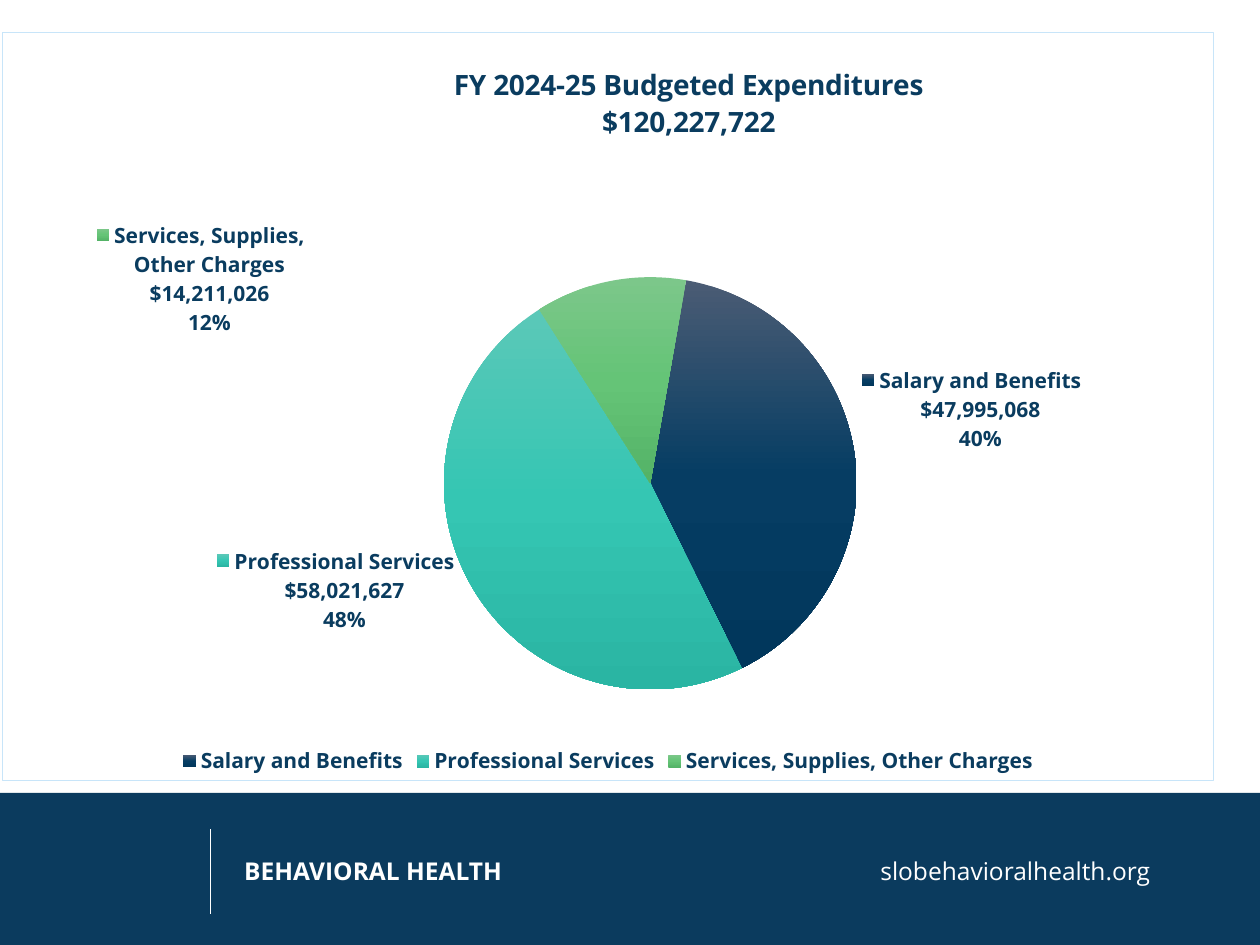
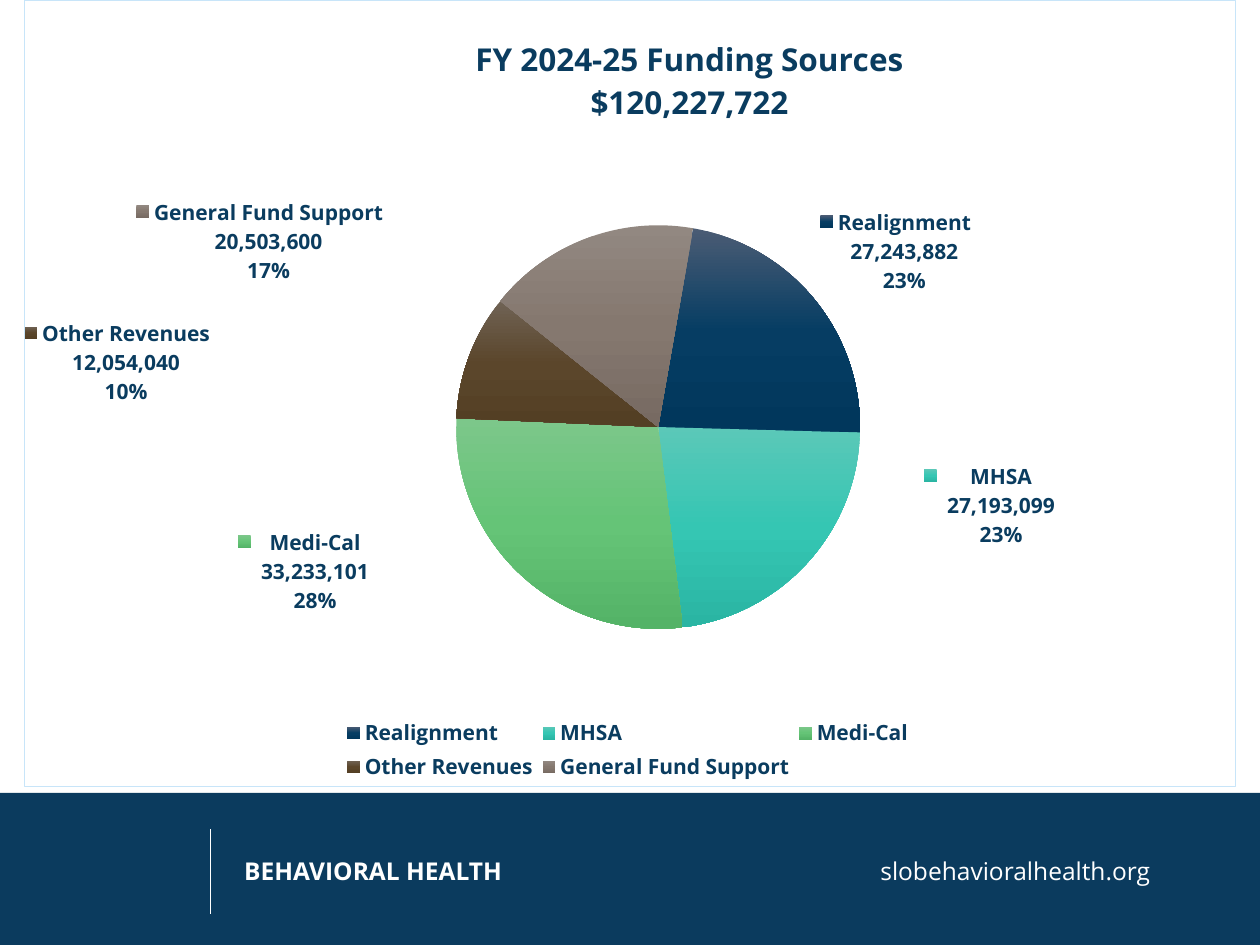
from copy import deepcopy
from dataclasses import dataclass

from lxml import etree
from pptx import Presentation
from pptx.chart.data import CategoryChartData
from pptx.dml.color import RGBColor
from pptx.enum.chart import XL_CHART_TYPE, XL_LABEL_POSITION, XL_LEGEND_POSITION
from pptx.enum.shapes import MSO_CONNECTOR, MSO_SHAPE
from pptx.oxml import parse_xml
from pptx.oxml.ns import nsdecls, qn
from pptx.util import Pt


@dataclass(frozen=True)
class Theme:
    font: str = "Open Sans"
    band: str = "0B3B5E"
    ink: str = "0A3C5F"
    paper: str = "FFFFFF"
    border: str = "C8E5F9"
    footer_size: int = 14
    label_size: int = 12
    # Top, middle and bottom colour of each slice
    slices: tuple = (
        ("4B5C74", "063D63", "01375C"),
        ("5BC8B8", "35C6B3", "2AB5A3"),
        ("7CC78A", "65C477", "54B367"),
        ("6F6254", "5B462B", "533F24"),
        ("928881", "85786F", "776A62"),
    )


T = Theme()
W, H = 720, 540
FOOTER_BOX = (0, 453, W, 87)

EXPENDITURES = dict(
    box=(1.2, 18, 692.64, 428.4),
    title=("FY 2024-25 Budgeted Expenditures", "$120,227,722"),
    title_size=16,
    title_at=(255.9, 16.1),
    pie_at=(252.5, 140.3, 236),
    number_format='"$"#,##0',
    data={
        "Salary and Benefits": 47995068,
        "Professional Services": 58021627,
        "Services, Supplies, Other Charges": 14211026,
    },
    label_shifts={1: (-5.5, -23.5), 2: (-173.8, 36)},
)

FUNDING = dict(
    box=(13.68, 0, 692.64, 450),
    title=("FY 2024-25 Funding Sources", "$120,227,722"),
    title_size=18,
    title_at=(255.7, 17.2),
    pie_at=(246.9, 128.6, 231),
    number_format="_(#,##0_)",
    data={
        "Realignment": 27243882,
        "MHSA": 27193099,
        "Medi-Cal": 33233101,
        "Other Revenues": 12054040,
        "General Fund Support": 20503600,
    },
    label_shifts={1: (63.6, -60.4), 2: (-81, -30), 3: (-144.3, 30), 4: (-115, 30.5)},
    legend_at=(179, 408, 332, 42),
)


def rgb(color):
    return RGBColor.from_string(color)


def set_font(font, size, color, bold=True):
    font.name, font.size, font.bold = T.font, Pt(size), bold
    font.color.rgb = rgb(color)


def add_text(p, text, size, color, bold=True):
    r = p.add_run()
    r.text = text
    set_font(r.font, size, color, bold)


def add_footer(slide, box):
    """Band with a divider, the department name and the web address."""
    x, y, w, h = box
    sp = slide.shapes.add_shape(MSO_SHAPE.RECTANGLE, Pt(x), Pt(y), Pt(w), Pt(h))
    sp.shadow.inherit = False
    sp.fill.solid()
    sp.fill.fore_color.rgb = rgb(T.band)
    sp.line.fill.background()

    # Name and address share one line, parted by a tab stop
    tb = slide.shapes.add_textbox(Pt(x + 132.5), Pt(y + 31.5), Pt(540), Pt(24.5))
    tf = tb.text_frame
    tf.word_wrap = True
    p = tf.paragraphs[0]
    p.line_spacing = Pt(18)
    tabs = etree.SubElement(p._p.get_or_add_pPr(), qn("a:tabLst"))
    etree.SubElement(tabs, qn("a:tab"), pos=str(Pt(363.5)), algn="l")
    add_text(p, "BEHAVIORAL HEALTH\t", T.footer_size, T.paper)
    add_text(p, "slobehavioralhealth.org", T.footer_size, T.paper, bold=False)

    # Divider
    cx = slide.shapes.add_connector(
        MSO_CONNECTOR.STRAIGHT, Pt(x + 120.2), Pt(y + 20.8), Pt(x + 120.2), Pt(y + 69))
    cx.line.color.rgb = rgb(T.paper)
    cx.line.width = Pt(0.5)
    etree.SubElement(cx._element.spPr, qn("a:effectLst"))


def set_layout(parent, index, box, at, modes=True):
    """Place a chart part at points (x, y[, w, h]) within the chart's box."""
    for old in parent.findall(qn("c:layout")):
        parent.remove(old)
    layout = etree.Element(qn("c:layout"))
    manual = etree.SubElement(layout, qn("c:manualLayout"))
    if modes:
        for tag in ("xMode", "yMode"):
            etree.SubElement(manual, qn("c:" + tag), val="edge")
    for tag, value, full in zip("xywh", at, (box[2], box[3]) * 2):
        etree.SubElement(manual, qn("c:" + tag), val=f"{value / full:.4f}")
    parent.insert(index, layout)
    return manual


def set_frame(space):
    """White chart area with a thin square border."""
    space.chart.addprevious(parse_xml(f'<c:roundedCorners {nsdecls("c")} val="0"/>'))
    space.chart.addnext(parse_xml(
        f'<c:spPr {nsdecls("c", "a")}>'
        f'<a:solidFill><a:srgbClr val="{T.paper}"/></a:solidFill>'
        f'<a:ln w="{Pt(0.75)}"><a:solidFill><a:srgbClr val="{T.border}"/>'
        '</a:solidFill></a:ln></c:spPr>'))


def fill_slice(ser, index, colors):
    stops = "".join(
        f'<a:gs pos="{i * 50000}"><a:srgbClr val="{c}"/></a:gs>'
        for i, c in enumerate(colors))
    spPr = ser._element.get_or_add_dPt_for_point(index).get_or_add_spPr()
    spPr.append(parse_xml(
        f'<a:gradFill {nsdecls("a")} rotWithShape="1"><a:gsLst>{stops}</a:gsLst>'
        '<a:lin ang="5400000" scaled="0"/></a:gradFill>'))


def add_labels(ser, box, shifts):
    """Outside labels; those in shifts are moved from their usual place."""
    dl = ser.data_labels
    set_font(dl.font, T.label_size, T.ink)
    dl.position = XL_LABEL_POSITION.OUTSIDE_END
    dl.show_legend_key = dl.show_category_name = True
    dl.show_value = dl.show_percentage = True

    el = dl._element
    for old in el.findall(qn("c:showLeaderLines")):
        el.remove(old)
    etree.SubElement(el, qn("c:separator")).text = "\n"
    shared = list(el)
    etree.SubElement(el, qn("c:showLeaderLines"), val="0")
    for place, (index, shift) in enumerate(shifts.items()):
        label = etree.Element(qn("c:dLbl"))
        etree.SubElement(label, qn("c:idx"), val=str(index))
        set_layout(label, 1, box, shift, modes=False)
        label.extend(deepcopy(part) for part in shared)
        el.insert(place, label)


def add_pie(slide, box, title, title_size, title_at, pie_at, number_format,
            data, label_shifts, legend_at=None):
    # Labels take the number format of the values, and shares their own
    cd = CategoryChartData(number_format=number_format)
    cd.categories = list(data)
    cd.add_series("Series 1", list(data.values()))
    chart = slide.shapes.add_chart(
        XL_CHART_TYPE.PIE, *(Pt(v) for v in box), cd).chart
    set_font(chart.font, 10, T.ink)
    set_frame(chart._chartSpace)

    # Title
    chart.has_title = True
    tf = chart.chart_title.text_frame
    for i, line in enumerate(title):
        p = tf.add_paragraph() if i else tf.paragraphs[0]
        add_text(p, line, title_size, T.ink)
    set_layout(chart.chart_title._element, 1, box, title_at)

    # Pie and its labels
    x, y, size = pie_at
    plot_area = chart._chartSpace.chart.plotArea
    manual = set_layout(plot_area, 0, box, (x, y, size, size))
    manual.insert(0, parse_xml(f'<c:layoutTarget {nsdecls("c")} val="inner"/>'))
    plot = chart.plots[0]
    plot.vary_by_categories = True
    for old in plot._element.findall(qn("c:firstSliceAng")):
        plot._element.remove(old)
    etree.SubElement(plot._element, qn("c:firstSliceAng"), val="10")
    ser = plot.series[0]
    for i, colors in enumerate(T.slices[:len(data)]):
        fill_slice(ser, i, colors)
    add_labels(ser, box, label_shifts)

    # Legend
    chart.has_legend = True
    chart.legend.position = XL_LEGEND_POSITION.BOTTOM
    chart.legend.include_in_layout = False
    set_font(chart.legend.font, T.label_size, T.ink)
    if legend_at:
        set_layout(chart.legend._element, 1, box, legend_at)


def main():
    prs = Presentation()
    prs.slide_width, prs.slide_height = Pt(W), Pt(H)
    for pie in (EXPENDITURES, FUNDING):
        slide = prs.slides.add_slide(prs.slide_layouts[6])
        add_footer(slide, FOOTER_BOX)
        add_pie(slide, **pie)
    prs.save("out.pptx")


if __name__ == "__main__":
    main()
